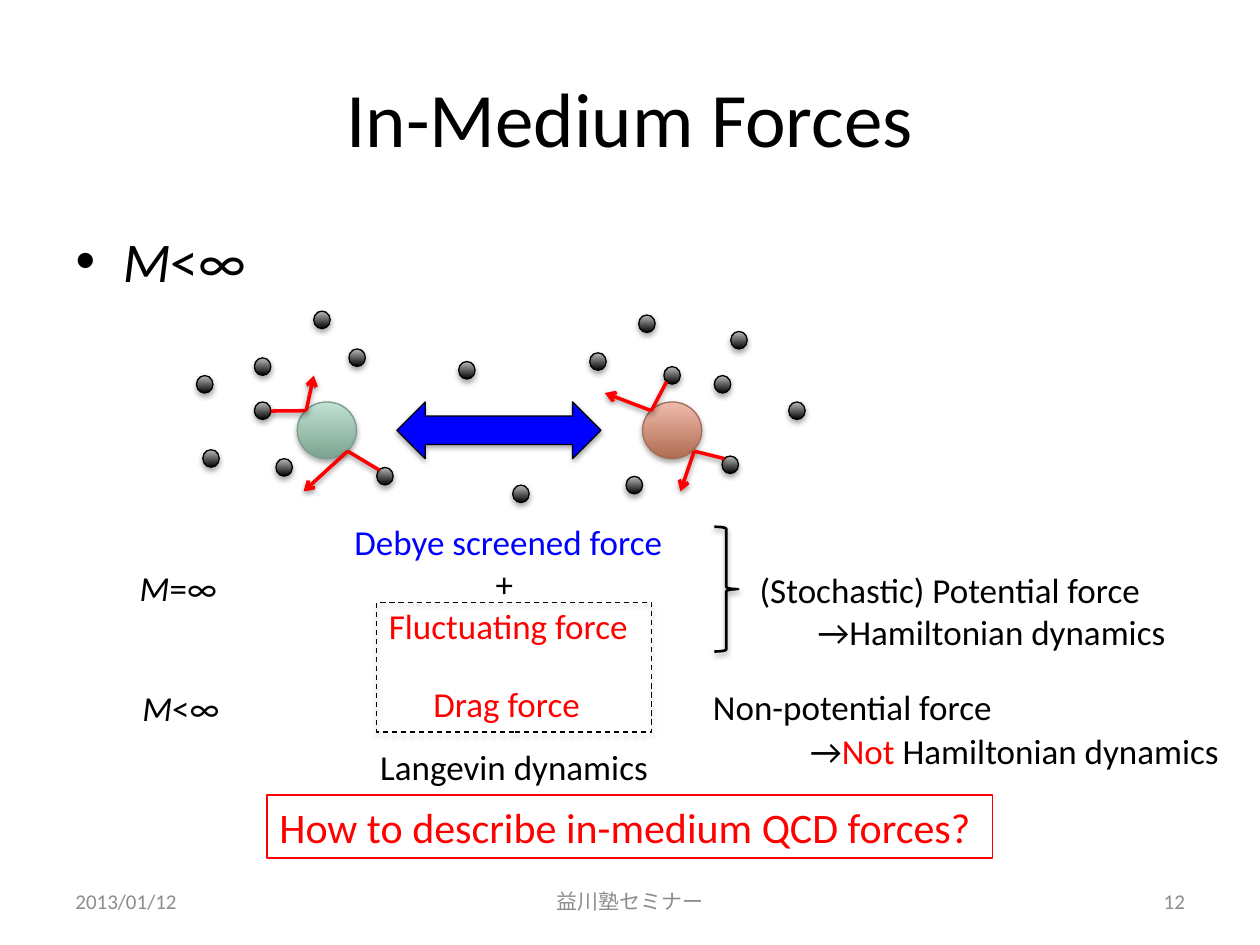
"""Build the In-Medium Forces slide with its particle diagram and force summary."""
from lxml import etree
from pptx import Presentation
from pptx import util as u
from pptx.dml.color import RGBColor
from pptx.enum import dml, shapes, text
from pptx.oxml import ns

Pt = u.Pt
BLACK, RED, BLUE, GREY = "000000", "FF0000", "0000FF", "8C8C8C"
LEFT, CENTER, RIGHT = text.PP_ALIGN.LEFT, text.PP_ALIGN.CENTER, text.PP_ALIGN.RIGHT


def paint(colour_format, colour):
    colour_format.rgb = RGBColor.from_string(colour)


def write(frame, size, lines, align=LEFT):
    for number, line in enumerate(lines):
        paragraph = frame.add_paragraph() if number else frame.paragraphs[0]
        paragraph.alignment = align
        for words, colour, italic in line:
            run = paragraph.add_run()
            run.text = words
            run.font.name = "Calibri"
            run.font.size = Pt(size)
            run.font.italic = italic
            run.font.fill.solid()
            paint(run.font.color, colour)


deck = Presentation()
deck.slide_width, deck.slide_height = Pt(720), Pt(540)
slide = deck.slides.add_slide(deck.slide_layouts[1])

title = slide.shapes.title
title.left, title.top, title.width, title.height = Pt(36), Pt(21.6), Pt(648), Pt(90)
write(title.text_frame, 44, [[("In-Medium Forces", BLACK, False)]], CENTER)
condition = slide.placeholders[1]
condition.left, condition.top, condition.width, condition.height = Pt(36), Pt(126), Pt(648), Pt(356.4)
write(condition.text_frame, 32, [[("M", BLACK, True), ("<∞", BLACK, False)]])

heavy = [
    (169.9, 229.7, 33.8, 32.4, "7BA390", "C1E1D1", "7C9B8D"),
    (367.2, 229.7, 33.8, 32.4, "AF6C52", "F0BBAC", "A26E59"),
]
medium = [
    (145.4, 204.5), (145.4, 229.7), (199.4, 199.4), (157.7, 262.1), (115.9, 257),
    (215.3, 267.1), (262.1, 206.6), (337, 201.6), (357.8, 272.2), (379.4, 209.5),
    (412.6, 260.6), (408.2, 214.6), (365, 180), (112.3, 214.6), (450.7, 229.7),
    (417.6, 189.4), (293, 277.2), (179.3, 177.8),
]
light = [(x, y, 9.4, 10, BLACK, "BDBDBD", BLACK) for x, y in medium]
for x, y, width, height, bottom, top, outline in heavy + light:
    particle = slide.shapes.add_shape(shapes.MSO_SHAPE.OVAL, Pt(x), Pt(y), Pt(width), Pt(height))
    particle.fill.gradient()
    particle.fill.gradient_angle = 90
    for stop, colour in zip(particle.fill.gradient_stops, (bottom, top)):
        paint(stop.color, colour)
    particle.line.width = Pt(0.75)
    paint(particle.line.color, outline)

force = slide.shapes.add_shape(shapes.MSO_SHAPE.LEFT_RIGHT_ARROW, Pt(226.8), Pt(229.7), Pt(116.6), Pt(32.4))
force.fill.solid()
paint(force.fill.fore_color, BLUE)
force.line.width = Pt(0.75)
paint(force.line.color, BLACK)

collisions = [
    [(380.9, 218.2), (372.2, 234.7), (345.6, 224.6)],
    [(216.7, 268.6), (198.7, 257.8), (173.5, 280.8)],
    [(154.8, 234.9), (175, 234.7), (179.3, 214.6)],
    [(414, 262.1), (396.7, 257.8), (388.8, 280.8)],
]
for start, impact, end in collisions:
    for origin, target in ((start, impact), (impact, end)):
        track = slide.shapes.add_connector(
            shapes.MSO_CONNECTOR.STRAIGHT, *(Pt(value) for value in origin + target))
        track.line.width = Pt(2)
        paint(track.line.color, RED)
    etree.SubElement(track.line._get_or_add_ln(), ns.qn("a:tailEnd"), type="arrow")

brace = slide.shapes.add_shape(shapes.MSO_SHAPE.RIGHT_BRACE, Pt(408.2), Pt(301), Pt(13.7), Pt(71.3))
brace.fill.background()
brace.line.width = Pt(1.5)
paint(brace.line.color, BLACK)

langevin = slide.shapes.add_shape(shapes.MSO_SHAPE.RECTANGLE, Pt(215.3), Pt(344.2), Pt(157), Pt(74.2))
langevin.fill.background()
langevin.line.width = Pt(0.75)
langevin.line.dash_style = dml.MSO_LINE.DASH
paint(langevin.line.color, BLACK)

labels = [
    (194.4, 293.8, 192.2, 79.9, CENTER, [
        [("Debye screened force", BLUE, False)],
        [("+ ", BLACK, False)],
        [("Fluctuating force", RED, False)]]),
    (240.5, 386.6, 100.1, 31.7, LEFT, [[("Drag force", RED, False)]]),
    (210.2, 422.6, 169.2, 31.7, LEFT, [[("Langevin dynamics", BLACK, False)]]),
    (72.7, 320.4, 59, 31.7, LEFT, [[("M", BLACK, True), ("=∞", BLACK, False)]]),
    (74.2, 388.8, 59, 31.7, LEFT, [[("M", BLACK, True), ("<∞", BLACK, False)]]),
    (427, 321.1, 234.7, 31.7, LEFT, [[("(Stochastic) Potential force", BLACK, False)]]),
    (460.1, 345.6, 216.7, 31.7, LEFT, [[("→Hamiltonian dynamics", BLACK, False)]]),
    (400.3, 388.1, 176.4, 31.7, LEFT, [[("Non-potential force", BLACK, False)]]),
    (455.8, 413.3, 252, 31.7, LEFT, [
        [("→", BLACK, False), ("Not", RED, False), (" Hamiltonian dynamics", BLACK, False)]]),
]
for x, y, width, height, align, lines in labels:
    label = slide.shapes.add_textbox(Pt(x), Pt(y), Pt(width), Pt(height))
    label.text_frame.word_wrap = False
    write(label.text_frame, 20, lines, align)

question = slide.shapes.add_textbox(Pt(152.6), Pt(454.3), Pt(414.7), Pt(36))
question.line.width = Pt(0.75)
paint(question.line.color, RED)
question.text_frame.word_wrap = False
write(question.text_frame, 24, [[("How to describe in-medium QCD forces?", RED, False)]])

footers = [
    (36, 168, LEFT, "2013/01/12"),
    (246.2, 228.2, CENTER, "益川塾セミナー"),
    (516.2, 168, RIGHT, "12"),
]
for x, width, align, words in footers:
    footer = slide.shapes.add_textbox(Pt(x), Pt(500.4), Pt(width), Pt(28.8))
    footer.text_frame.word_wrap = True
    footer.text_frame.vertical_anchor = text.MSO_ANCHOR.MIDDLE
    write(footer.text_frame, 12, [[(words, GREY, False)]], align)

deck.save("out.pptx")
